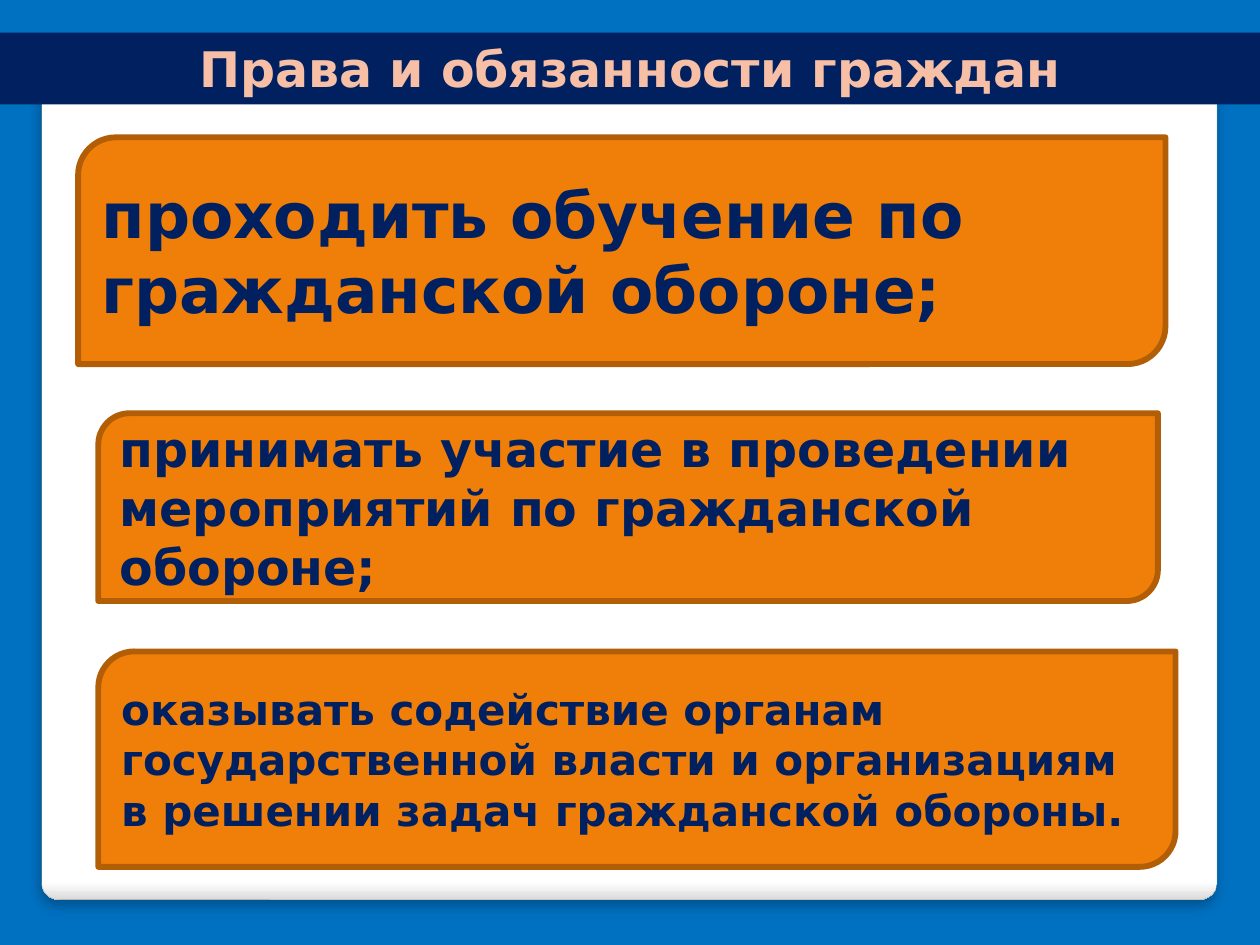
from lxml.etree import fromstring
from pptx import Presentation
from pptx.dml.color import RGBColor
from pptx.enum.shapes import MSO_SHAPE
from pptx.enum.text import MSO_ANCHOR, PP_ALIGN
from pptx.util import Inches, Pt

COLORS = {
    "background": "0070C0",
    "navy": "002060",
    "title": "F6BFA6",
    "card": "F07F09",
    "card_line": "B25E07",
    "panel": "FFFFFF",
    "panel_edge": "DADADA",
    "panel_line": "A4A4A4",
}
FONT = "DejaVu Sans"
SHADOW = (
    '<a:effectLst xmlns:a="http://schemas.openxmlformats.org/drawingml/2006/main">'
    '<a:outerShdw blurRad="76200" dist="50800" dir="5400000" algn="t" rotWithShape="0">'
    '<a:srgbClr val="000000"><a:alpha val="25000"/></a:srgbClr>'
    "</a:outerShdw></a:effectLst>"
)


def color(name):
    return RGBColor.from_string(COLORS[name])


def add_block(kind, left, top, width, height, fill):
    block = page.shapes.add_shape(
        kind, Inches(left), Inches(top), Inches(width), Inches(height))
    block.shadow.inherit = False
    block.fill.solid()
    block.fill.fore_color.rgb = color(fill)
    block.line.fill.background()
    return block


def write(block, text, size, text_color, align, anchor):
    frame = block.text_frame
    frame.word_wrap = True
    frame.vertical_anchor = anchor
    paragraph = frame.paragraphs[0]
    paragraph.text = text
    paragraph.alignment = align
    paragraph.font.name = FONT
    paragraph.font.size = Pt(size)
    paragraph.font.bold = True
    paragraph.font.color.rgb = color(text_color)


deck = Presentation()
deck.slide_width, deck.slide_height = Inches(10), Inches(7.5)
page = deck.slides.add_slide(deck.slide_layouts[6])
page.background.fill.solid()
page.background.fill.fore_color.rgb = color("background")

# White panel with a shaded bottom edge and a soft shadow
panel = add_block(MSO_SHAPE.ROUNDED_RECTANGLE, 0.33, 0.36, 9.33, 6.78, "panel")
panel.adjustments[0] = 0.02
panel.fill.gradient()
panel.fill.gradient_angle = 270
stops = zip(panel.fill.gradient_stops, (0.98, 1), ("panel", "panel_edge"))
for stop, position, name in stops:
    stop.position = position
    stop.color.rgb = color(name)
panel.line.color.rgb = color("panel_line")
panel.line.width = Pt(0.16)
properties = panel.element.spPr
properties.replace(properties[-1], fromstring(SHADOW))

# Title band
band = add_block(MSO_SHAPE.RECTANGLE, 0, 0.26, 10, 0.57, "navy")
write(band, "Права и обязанности граждан", 28, "title",
      PP_ALIGN.CENTER, MSO_ANCHOR.TOP)

# Duty cards: left, top, width, height, text size, text
cards = [
    (0.62, 1.09, 8.63, 1.8, 36, "проходить обучение по гражданской обороне;"),
    (0.78, 3.28, 8.41, 1.49, 28,
     "принимать участие в проведении мероприятий по гражданской обороне;"),
    (0.78, 5.17, 8.55, 1.71, 24,
     "оказывать содействие органам государственной власти и организациям "
     "в решении задач гражданской обороны."),
]
for left, top, width, height, size, text in cards:
    card = add_block(MSO_SHAPE.ROUND_2_DIAG_RECTANGLE,
                     left, top, width, height, "card")
    card.line.color.rgb = color("card_line")
    card.line.width = Pt(3.35)
    write(card, text, size, "navy", PP_ALIGN.LEFT, MSO_ANCHOR.MIDDLE)

deck.save("out.pptx")
